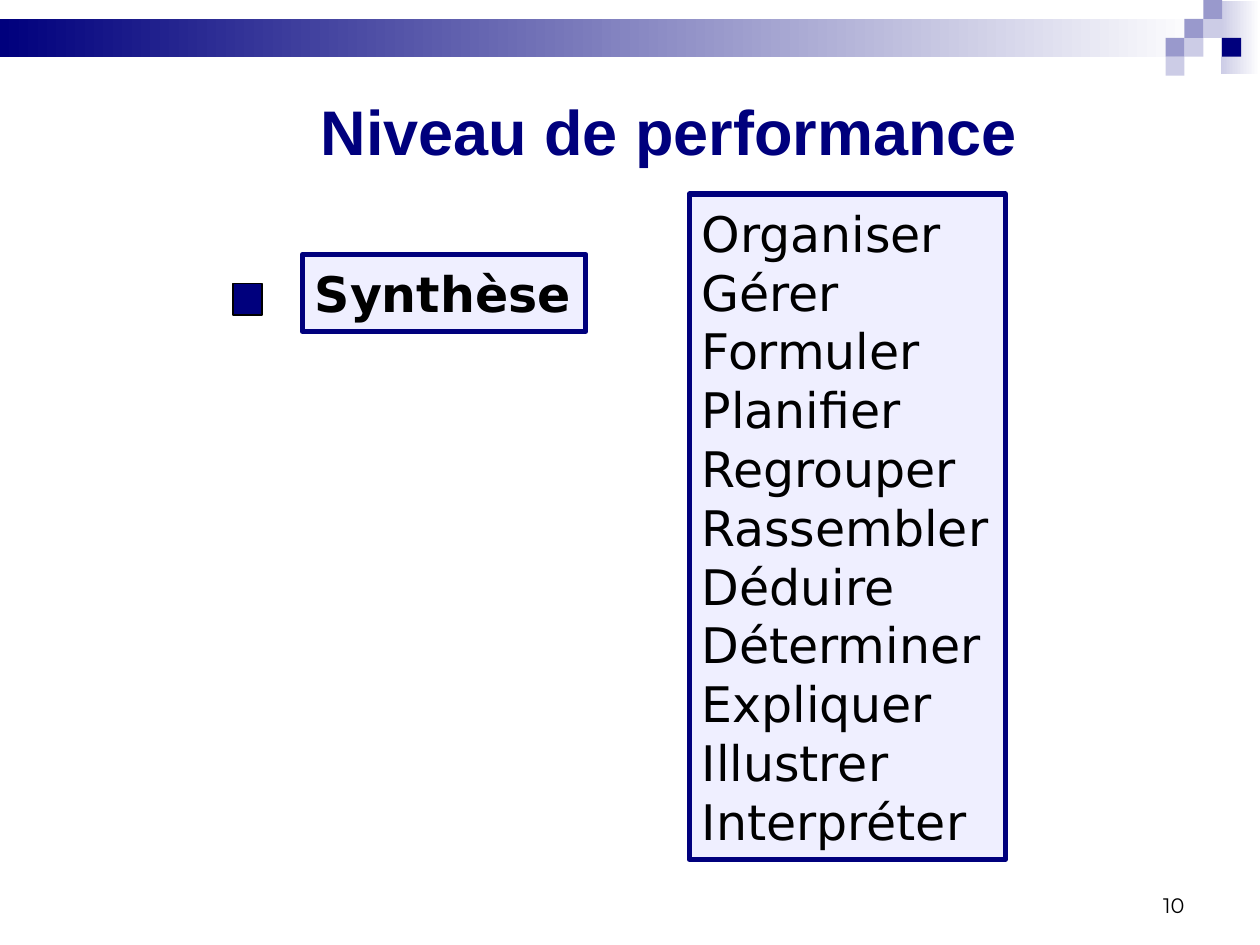
import lxml.etree
import pptx
import pptx.dml.color
import pptx.enum.shapes
import pptx.enum.text
import pptx.oxml.ns
import pptx.util

THEME = {
    "navy": "00007D", "lavender": "9999CC", "pale": "CCCCE6",
    "tint": "9999FF", "white": "FFFFFF", "black": "000000",
    "title_font": "Arial", "body_font": "DejaVu Sans", "number_font": "Montserrat",
    "title_size": 36, "body_size": 28, "number_size": 12,
    "tint_opacity": 15, "frame_width": 3, "bullet_line_width": 0.75,
    "body_line_spacing": 33.6,
}
COLUMNS, ROWS = 100, 75
TILE = 1.5  # side of a corner tile, in grid cells

ALIGN = pptx.enum.text.PP_ALIGN
ANCHOR = pptx.enum.text.MSO_ANCHOR

presentation = pptx.Presentation()
presentation.slide_width = pptx.util.Inches(10)
presentation.slide_height = pptx.util.Inches(7.5)
cell_width = presentation.slide_width / COLUMNS
cell_height = presentation.slide_height / ROWS
slide = presentation.slides.add_slide(presentation.slide_layouts[6])


def add_box(left, top, width, height, fill=None, fade_to=None, line=None, line_width=0):
    """Add a rectangle measured in grid cells; fade_to makes a left-to-right gradient."""
    shape = slide.shapes.add_shape(
        pptx.enum.shapes.MSO_SHAPE.RECTANGLE,
        round(left * cell_width), round(top * cell_height),
        round(width * cell_width), round(height * cell_height))
    shape.shadow.inherit = False
    if fade_to:
        shape.fill.gradient()
        shape.fill.gradient_angle = 0
        for stop, color in zip(shape.fill.gradient_stops, (fill, fade_to)):
            stop.color.rgb = pptx.dml.color.RGBColor.from_string(THEME[color])
    elif fill:
        shape.fill.solid()
        shape.fill.fore_color.rgb = pptx.dml.color.RGBColor.from_string(THEME[fill])
    else:
        shape.fill.background()
    if line:
        shape.line.color.rgb = pptx.dml.color.RGBColor.from_string(THEME[line])
        shape.line.width = pptx.util.Pt(line_width)
    else:
        shape.line.fill.background()
    return shape


def write(shape, lines, role, color, align=ALIGN.LEFT, anchor=ANCHOR.MIDDLE,
          bold=False, wrap=True, spacing=None):
    """Fill a shape with one paragraph per line, in the theme font of the role."""
    frame = shape.text_frame
    frame.word_wrap = wrap
    frame.vertical_anchor = anchor
    frame.text = "\n".join(lines)
    for paragraph in frame.paragraphs:
        paragraph.alignment = align
        if spacing:
            paragraph.line_spacing = pptx.util.Pt(spacing)
        paragraph.font.name = THEME[role + "_font"]
        paragraph.font.size = pptx.util.Pt(THEME[role + "_size"])
        paragraph.font.bold = bold
        paragraph.font.color.rgb = pptx.dml.color.RGBColor.from_string(THEME[color])


# Header band and corner tiles
add_box(96.9, 0.1, 3.1, 5.8, "pale", fade_to="white")
add_box(0, TILE, 95.5, 2 * TILE, "navy", fade_to="white")
corner_left = 92.5
for column, row, color in [
    (1, 2, "pale"), (0, 3, "pale"), (0, 2, "lavender"), (2, 1, "pale"),
    (3, 2, "navy"), (1, 1, "lavender"), (2, 0, "lavender"),
]:
    add_box(corner_left + column * TILE, row * TILE, TILE, TILE, color)

# Slide number and title
write(add_box(71.7, 68.3, 23.3, 5), ["10"], "number", "black",
      align=ALIGN.RIGHT, anchor=ANCHOR.BOTTOM)
write(add_box(10.6, 6.8, 85, 7.1), ["Niveau de performance"], "title", "navy",
      align=ALIGN.CENTER, bold=True)

# Level with its square bullet, and the verbs that belong to it
add_box(18.5, 22.5, 2.3, 2.5, "navy", line="black", line_width=THEME["bullet_line_width"])
verbs = ["Organiser", "Gérer", "Formuler", "Planifier", "Regrouper", "Rassembler",
         "Déduire", "Déterminer", "Expliquer", "Illustrer", "Interpréter"]
for position, lines, bold in [
    ((24, 20.2, 22.5, 6.1), ["Synthèse"], True),
    ((54.7, 15.4, 25.1, 52.8), verbs, False),
]:
    panel = add_box(*position, "tint", line="navy", line_width=THEME["frame_width"])
    fill_color = panel.fill._xPr.find(pptx.oxml.ns.qn("a:solidFill"))[0]
    lxml.etree.SubElement(fill_color, pptx.oxml.ns.qn("a:alpha"),
                          val=str(THEME["tint_opacity"] * 1000))
    write(panel, lines, "body", "black", bold=bold, wrap=False,
          spacing=THEME["body_line_spacing"])

presentation.save("out.pptx")
